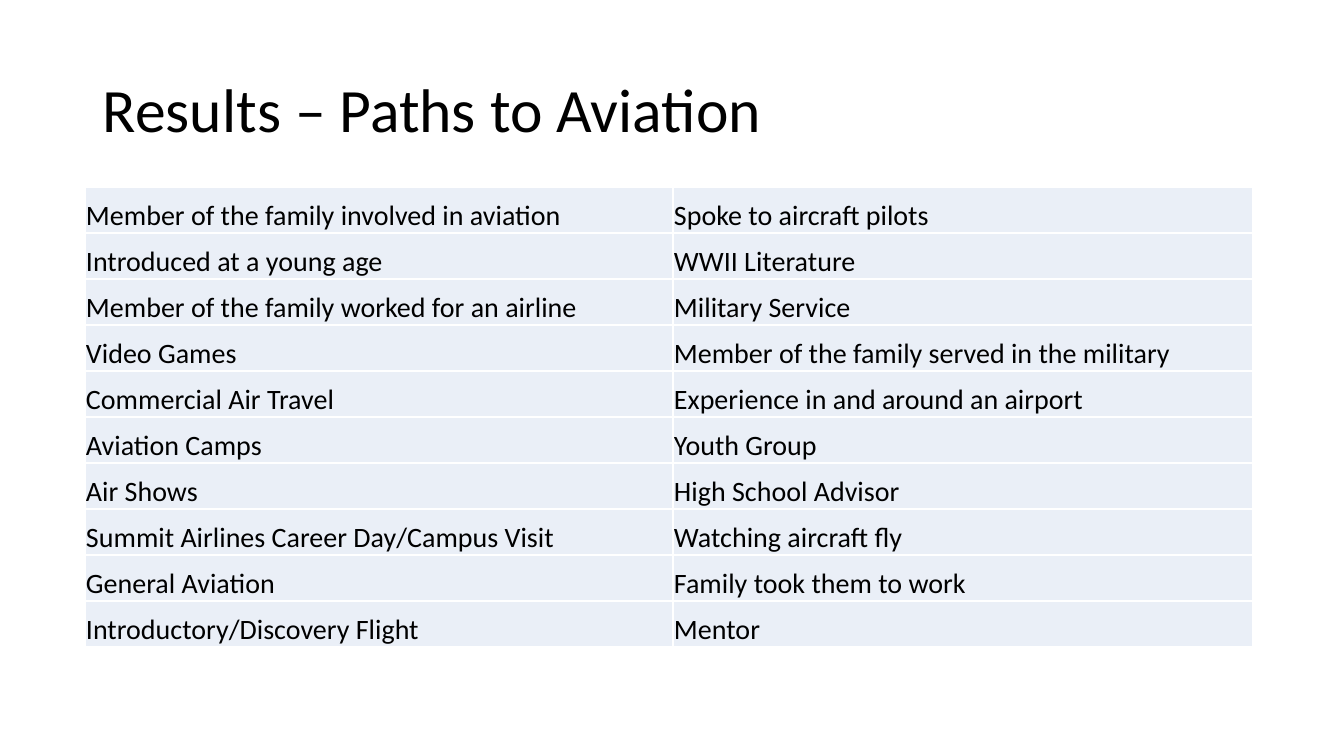
from typing import NamedTuple

from lxml import etree
from pptx import Presentation
from pptx.dml.color import RGBColor
from pptx.enum.text import MSO_ANCHOR
from pptx.oxml.ns import qn
from pptx.util import Emu, Pt

MIDDLE = MSO_ANCHOR.MIDDLE
BOTTOM = MSO_ANCHOR.BOTTOM
EMU_PER_PX = 914400 / 100.8
FONT = "Calibri"
COLOURS = {"text": "000000", "cell": "EAEFF7", "border": "FFFFFF"}
COLUMN_WIDTHS = (588, 580)
ROW_HEIGHT = 46
BORDER_SIDES = ("a:lnL", "a:lnR", "a:lnT", "a:lnB")


class PathPair(NamedTuple):
    left: str
    right: str


PATHS = (
    PathPair("Member of the family involved in aviation", "Spoke to aircraft pilots"),
    PathPair("Introduced at a young age", "WWII Literature"),
    PathPair("Member of the family worked for an airline", "Military Service"),
    PathPair("Video Games", "Member of the family served in the military"),
    PathPair("Commercial Air Travel", "Experience in and around an airport"),
    PathPair("Aviation Camps", "Youth Group"),
    PathPair("Air Shows", "High School Advisor"),
    PathPair("Summit Airlines Career Day/Campus Visit", "Watching aircraft fly"),
    PathPair("General Aviation", "Family took them to work"),
    PathPair("Introductory/Discovery Flight", "Mentor"),
)


def px(length: int) -> Emu:
    return Emu(round(length * EMU_PER_PX))


def colour(name: str) -> RGBColor:
    return RGBColor.from_string(COLOURS[name])


def write(frame, text: str, size: int) -> None:
    frame.text = text
    font = frame.paragraphs[0].font
    font.name = FONT
    font.size = Pt(size)
    font.color.rgb = colour("text")


def add_borders(cell) -> None:
    properties = cell._tc.get_or_add_tcPr()
    for position, side in enumerate(BORDER_SIDES):
        line = etree.Element(qn(side), w=str(Pt(1)))
        fill = etree.SubElement(line, qn("a:solidFill"))
        etree.SubElement(fill, qn("a:srgbClr"), val=COLOURS["border"])
        properties.insert(position, line)


def fill_cell(cell, text: str) -> None:
    write(cell.text_frame, text, 20)
    cell.vertical_anchor = BOTTOM
    cell.margin_left = cell.margin_right = cell.margin_top = px(1)
    cell.margin_bottom = 0
    cell.fill.solid()
    cell.fill.fore_color.rgb = colour("cell")
    add_borders(cell)


def add_title(slide) -> None:
    title = slide.shapes.add_textbox(px(93), px(40), px(1159), px(146)).text_frame
    title.word_wrap = True
    title.vertical_anchor = MIDDLE
    write(title, "Results – Paths to Aviation", 44)
    title.paragraphs[0].line_spacing = 0.9


def add_paths(slide) -> None:
    paths = slide.shapes.add_table(
        len(PATHS), len(COLUMN_WIDTHS), px(85), px(187),
        px(sum(COLUMN_WIDTHS)), px(ROW_HEIGHT * len(PATHS)),
    ).table
    paths.first_row = False
    paths.horz_banding = False
    for column, width in zip(paths.columns, COLUMN_WIDTHS):
        column.width = px(width)
    for row, pair in zip(paths.rows, PATHS):
        row.height = px(ROW_HEIGHT)
        for cell, text in zip(row.cells, pair):
            fill_cell(cell, text)


def main() -> None:
    presentation = Presentation()
    presentation.slide_width = px(1344)
    presentation.slide_height = px(756)
    slide = presentation.slides.add_slide(presentation.slide_layouts[6])
    add_title(slide)
    add_paths(slide)
    presentation.save("out.pptx")


if __name__ == "__main__":
    main()
